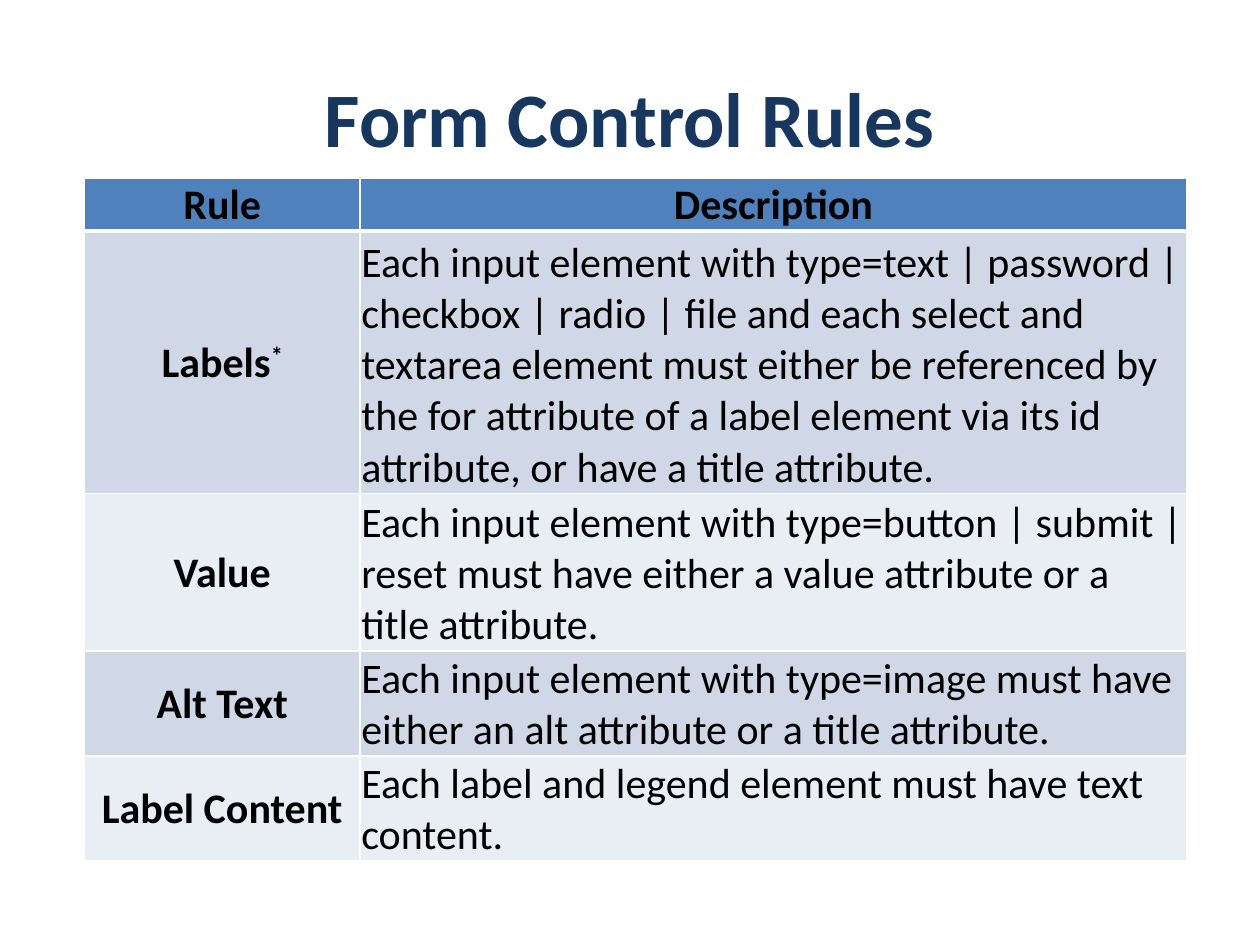
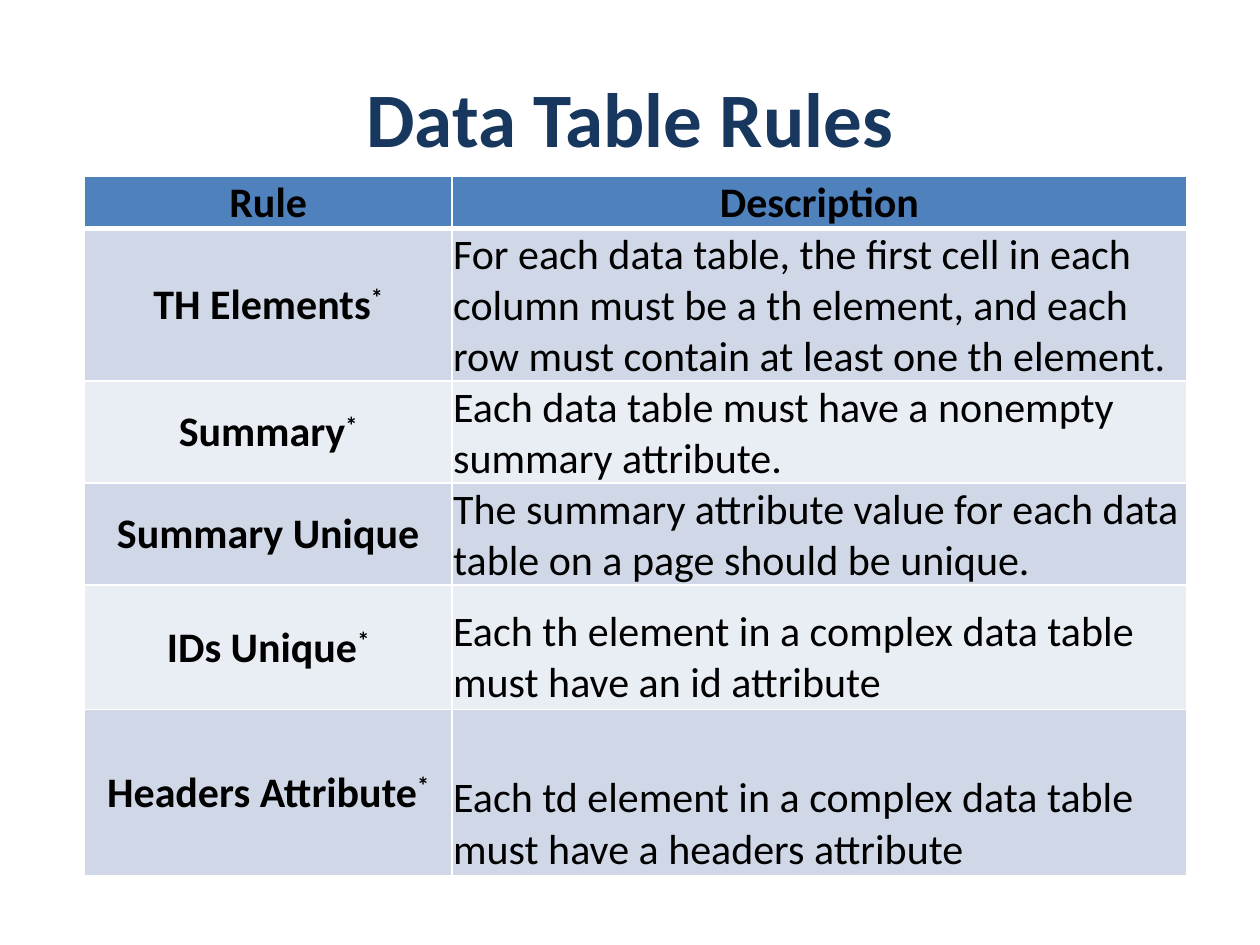
from pptx import Presentation
from pptx.dml.color import RGBColor
from pptx.enum.text import MSO_ANCHOR, PP_ALIGN
from pptx.oxml.ns import qn
from pptx.util import Pt
from lxml import etree

CENTER, LEFT = PP_ALIGN.CENTER, PP_ALIGN.LEFT
MIDDLE, BOTTOM = MSO_ANCHOR.MIDDLE, MSO_ANCHOR.BOTTOM

NAVY = RGBColor(0x17, 0x37, 0x5E)
BLACK = RGBColor(0x00, 0x00, 0x00)
WHITE = RGBColor(0xFF, 0xFF, 0xFF)
HEADER_BLUE = RGBColor(0x4F, 0x81, 0xBD)
BANDS = (RGBColor(0xD0, 0xD8, 0xE8), RGBColor(0xE9, 0xED, 0xF4))

TITLE_FONT = {"name": "Calibri", "size": Pt(44), "bold": True}
RULE_FONT = {"name": "Calibri", "size": Pt(24), "bold": True}
DESCRIPTION_FONT = {**RULE_FONT, "bold": False}
CELL_MARGINS = {"margin_left": Pt(0.72), "margin_top": Pt(0.72),
                "margin_right": Pt(0.72), "margin_bottom": 0}

TABLE_LEFT, TABLE_WIDTH = 48.25, 630
THIN, THICK = 1, 3
HEADINGS = ("Rule", "Description")

# A trailing asterisk in a rule name is shown as superscript.
FORM_RULES = [
    ("Labels*", "Each input element with type=text | password | checkbox | radio | file "
     "and each select and textarea element must either be referenced by the for attribute "
     "of a label element via its id attribute, or have a title attribute."),
    ("Value", "Each input element with type=button | submit | reset must have either "
     "a value attribute or a title attribute."),
    ("Alt Text", "Each input element with type=image must have either an alt attribute "
     "or a title attribute."),
    ("Label Content", "Each label and legend element must have text content."),
]
TABLE_RULES = [
    ("TH Elements*", "For each data table, the first cell in each column must be "
     "a th element, and each row must contain at least one th element."),
    ("Summary*", "Each data table must have a nonempty summary attribute."),
    ("Summary Unique", "The summary attribute value for each data table on a page "
     "should be unique."),
    ("IDs Unique*", "Each th element in a complex data table must have an id attribute"),
    ("Headers Attribute*", "Each td element in a complex data table must have "
     "a headers attribute"),
]


def set_attributes(target, values):
    for name, value in values.items():
        setattr(target, name, value)


def add_run(paragraph, text, font, color):
    run = paragraph.add_run()
    run.text = text
    set_attributes(run.font, font)
    run.font.color.rgb = color
    return run


def add_title(slide, text):
    shape = slide.shapes.add_textbox(Pt(36), Pt(21.6), Pt(648), Pt(90))
    frame = shape.text_frame
    set_attributes(frame, {"word_wrap": True, "vertical_anchor": MIDDLE})
    paragraph = frame.paragraphs[0]
    paragraph.alignment = CENTER
    add_run(paragraph, text, TITLE_FONT, NAVY)


def set_borders(cell, top, bottom):
    """Draw white borders; top and bottom are widths in points."""
    properties = cell._tc.get_or_add_tcPr()
    for side, width in (("L", THIN), ("R", THIN), ("T", top), ("B", bottom)):
        line = etree.SubElement(properties, qn(f"a:ln{side}"), w=str(Pt(width)))
        fill = etree.SubElement(line, qn("a:solidFill"))
        etree.SubElement(fill, qn("a:srgbClr"), val=str(WHITE))


def fill_cell(cell, text, font, alignment, anchor):
    set_attributes(cell, {**CELL_MARGINS, "vertical_anchor": anchor})
    paragraph = cell.text_frame.paragraphs[0]
    paragraph.alignment = alignment
    add_run(paragraph, text.rstrip("*"), font, BLACK)
    if text.endswith("*"):
        marker = add_run(paragraph, "*", font, BLACK)
        marker.font._element.set("baseline", "30000")


def add_rules_table(slide, rules, top, rule_width, row_heights):
    rows = [HEADINGS, *rules]
    table = slide.shapes.add_table(
        len(rows), len(HEADINGS), Pt(TABLE_LEFT), Pt(top),
        Pt(TABLE_WIDTH), Pt(sum(row_heights))).table
    set_attributes(table, {"first_row": False, "horz_banding": False})
    for column, width in zip(table.columns, (rule_width, TABLE_WIDTH - rule_width)):
        column.width = Pt(width)
    for row_index, (texts, height) in enumerate(zip(rows, row_heights)):
        table.rows[row_index].height = Pt(height)
        is_header = row_index == 0
        color = HEADER_BLUE if is_header else BANDS[(row_index - 1) % 2]
        for column_index, text in enumerate(texts):
            cell = table.cell(row_index, column_index)
            set_borders(cell, THICK if row_index == 1 else THIN,
                        THICK if is_header else THIN)
            cell.fill.solid()
            cell.fill.fore_color.rgb = color
            if is_header or column_index == 0:
                fill_cell(cell, text, RULE_FONT, CENTER, MIDDLE)
            else:
                fill_cell(cell, text, DESCRIPTION_FONT, LEFT, BOTTOM)


def add_rules_slide(presentation, title, *table_arguments):
    slide = presentation.slides.add_slide(presentation.slide_layouts[6])
    add_title(slide, title)
    add_rules_table(slide, *table_arguments)


def main():
    presentation = Presentation()
    presentation.slide_width, presentation.slide_height = Pt(720), Pt(540)
    add_rules_slide(presentation, "Form Control Rules", FORM_RULES,
                    102, TABLE_WIDTH / 4, (30, 150, 90, 60, 60))
    add_rules_slide(presentation, "Data Table Rules", TABLE_RULES,
                    101, TABLE_WIDTH / 3, (28, 84, 56, 56, 71, 95))
    presentation.save("out.pptx")


if __name__ == "__main__":
    main()
